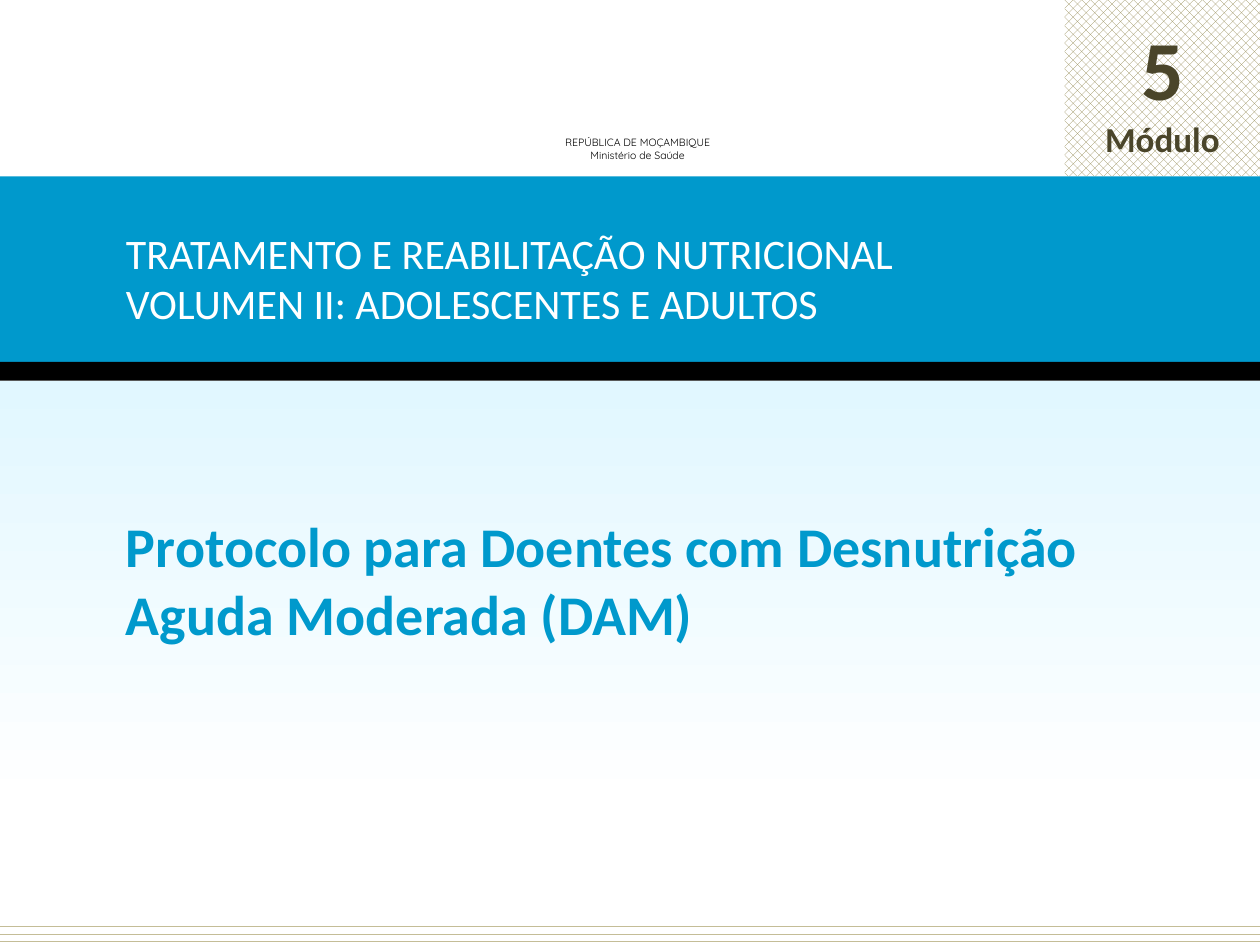
from pptx import Presentation
from pptx.dml.color import RGBColor
from pptx.enum.dml import MSO_PATTERN
from pptx.enum.shapes import MSO_SHAPE
from pptx.enum.text import MSO_ANCHOR, PP_ALIGN
from pptx.util import Pt

RECT = MSO_SHAPE.RECTANGLE
DASHES, DOTS = MSO_PATTERN.DASHED_HORIZONTAL, MSO_PATTERN.PERCENT_50
TOP, MIDDLE = MSO_ANCHOR.TOP, MSO_ANCHOR.MIDDLE
LEFT, CENTER = PP_ALIGN.LEFT, PP_ALIGN.CENTER

WIDTH, HEIGHT = 720, 540
HEADER = 100.8
COLORS = {
    "blue": "0099CC",
    "pale": "E1F7FF",
    "white": "FFFFFF",
    "black": "000000",
    "brown": "4A452A",
    "olive": "948A54",
    "sand": "C4BD97",
}


def rgb(name):
    return RGBColor.from_string(COLORS[name])


def add_rect(s, x, y, w, h):
    sp = s.shapes.add_shape(RECT, Pt(x), Pt(y), Pt(w), Pt(h))
    sp.shadow.inherit = False
    sp.line.fill.background()
    return sp


def add_solid(s, x, y, w, h, color):
    sp = add_rect(s, x, y, w, h)
    sp.fill.solid()
    sp.fill.fore_color.rgb = rgb(color)
    return sp


def add_pattern(s, x, y, w, h, pattern, color):
    sp = add_rect(s, x, y, w, h)
    sp.fill.patterned()
    sp.fill.pattern = pattern
    sp.fill.fore_color.rgb = rgb(color)
    sp.fill.back_color.rgb = rgb("white")
    return sp


def add_gradient(s, x, y, w, h, stops):
    sp = add_rect(s, x, y, w, h)
    sp.fill.gradient()
    sp.fill.gradient_angle = 270
    for stop, (position, color) in zip(sp.fill.gradient_stops, stops):
        stop.position = position
        stop.color.rgb = rgb(color)
    return sp


def write(sp, *lines, sizes, color, font="Calibri", bold=False, align=LEFT,
          anchor=MIDDLE, insets=(7.2, 3.6, 7.2, 3.6)):
    tf = sp.text_frame
    tf.word_wrap = True
    tf.vertical_anchor = anchor
    tf.margin_left, tf.margin_top, tf.margin_right, tf.margin_bottom = map(Pt, insets)
    for i, (text, size) in enumerate(zip(lines, sizes)):
        p = tf.paragraphs[0] if i == 0 else tf.add_paragraph()
        p.alignment = align
        r = p.add_run()
        r.text = text
        r.font.name = font
        r.font.size = Pt(size)
        r.font.bold = bold
        r.font.color.rgb = rgb(color)


def main():
    prs = Presentation()
    prs.slide_width, prs.slide_height = Pt(WIDTH), Pt(HEIGHT)
    s = prs.slides.add_slide(prs.slide_layouts[6])

    add_pattern(s, 0, 525, WIDTH, 15, DASHES, "sand")

    ministry = s.shapes.add_textbox(Pt(310.3), Pt(74.2), Pt(108), Pt(21.6))
    write(ministry, "REPÚBLICA DE MOÇAMBIQUE", "Ministério de Saúde",
          sizes=(6, 6), color="black", font="Quicksand", align=CENTER, anchor=TOP)

    module = add_pattern(s, 608.4, 0, 111.6, HEADER, DOTS, "olive")
    write(module, "5", "Módulo", sizes=(48, 20), color="brown", bold=True, align=CENTER)

    banner = add_solid(s, 0, HEADER, WIDTH, 116, "blue")
    write(banner, "TRATAMENTO E REABILITAÇÃO NUTRICIONAL",
          "VOLUMEN II: ADOLESCENTES E ADULTOS",
          sizes=(24, 24), color="white", insets=(72, 3.6, 7.2, 3.6))

    add_solid(s, 0, 206.8, WIDTH, 10.8, "black")

    body = add_gradient(s, 0, 217.6, WIDTH, 304.6, [(0, "pale"), (0.8, "white")])
    write(body, "Protocolo para Doentes com Desnutrição Aguda Moderada (DAM)",
          sizes=(32,), color="blue", bold=True, anchor=TOP, insets=(72, 75, 72, 3.6))

    prs.save("out.pptx")


if __name__ == "__main__":
    main()
